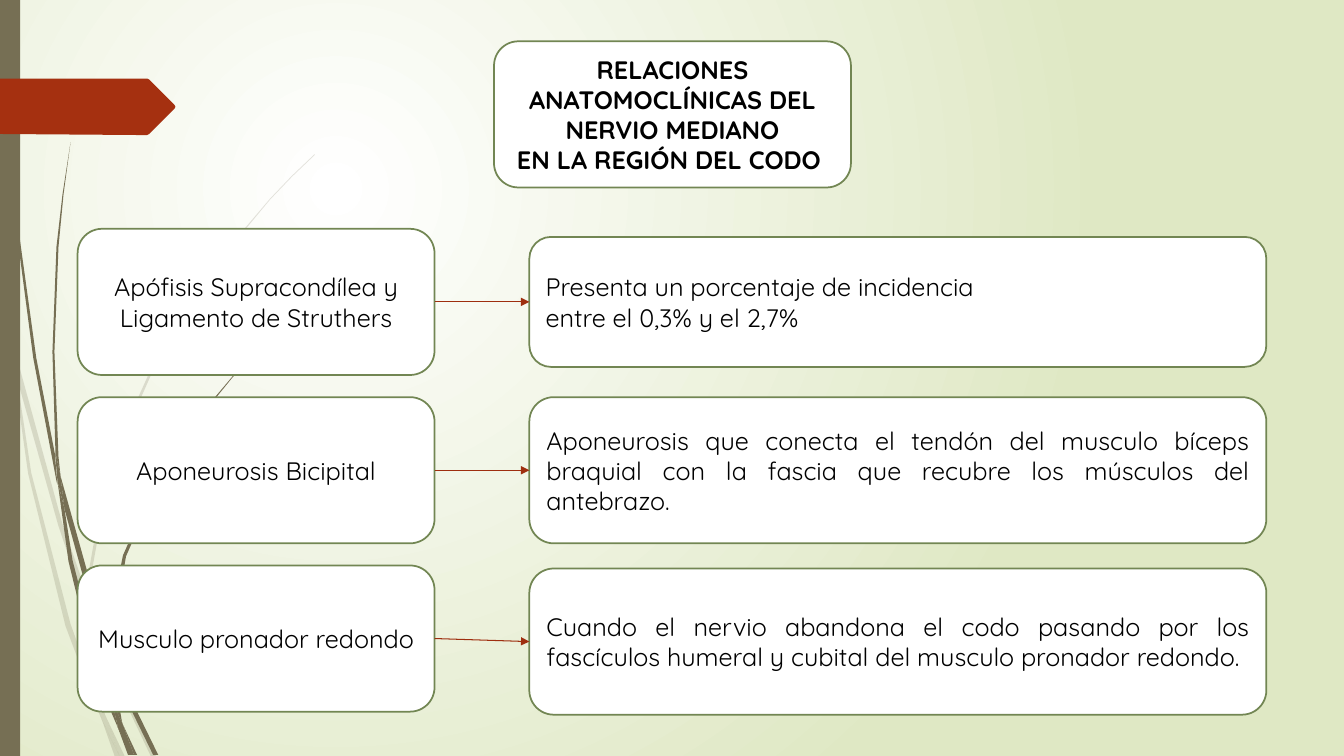
from lxml import etree
from pptx import Presentation
from pptx import util as u
from pptx.dml.color import RGBColor
from pptx.enum import shapes, text
from pptx.oxml.ns import qn

PX = 9144
OLIVE = RGBColor(0x76, 0x6F, 0x54)
RUST = RGBColor(0xA5, 0x30, 0x10)
ARROW = RGBColor(0x9E, 0x2E, 0x0F)
GREEN = RGBColor(0x72, 0x86, 0x53)
PALE_GREEN = RGBColor(0xDF, 0xE8, 0xC4)
WHITE = RGBColor(0xFF, 0xFF, 0xFF)
BLACK = RGBColor(0, 0, 0)
FONT = "Quicksand"

PALE_STEMS = [
    [(11, 350), (9, 322), (0, 282), (0, 299), (10, 344)],
    [(58, 522), (84, 599), (85, 586), (62, 520), (14, 345), (17, 376)],
    [(92, 607), (88, 596), (88, 610), (123, 694), (150, 751), (155, 751), (127, 692)],
    [(119, 751), (124, 751), (105, 711)],
    [(93, 683), (70, 619), (31, 469), (17, 376), (11, 350), (28, 470), (65, 621),
     (92, 693), (101, 714), (99, 707)],
    [(84, 599), (87, 646), (93, 683), (96, 692), (105, 711), (103, 706), (91, 646),
     (88, 610), (88, 608)],
    [(88, 584), (110, 462), (160, 349), (229, 245), (268, 198), (290, 175), (312, 154),
     (312, 153), (289, 175), (268, 197), (228, 244), (158, 348), (107, 461), (85, 584),
     (85, 586), (88, 596)],
    [(101, 714), (114, 751), (119, 751)],
    [(96, 692), (93, 683), (99, 707), (101, 714), (119, 751), (105, 711)],
]
DARK_STEMS = [
    [(7, 110), (17, 233), (33, 355), (56, 477), (57, 481), (55, 457), (55, 453),
     (36, 355), (19, 232), (8, 109), (5, 48), (4, 0), (3, 0), (4, 48)],
    [(88, 592), (106, 645), (106, 631), (93, 590), (60, 472), (64, 505)],
    [(113, 649), (110, 641), (111, 656), (132, 708), (152, 749), (157, 749), (136, 706)],
    [(110, 691), (98, 657), (72, 556), (64, 505), (57, 477), (68, 557), (93, 659),
     (111, 708), (117, 722), (116, 717)],
    [(60, 472), (58, 453), (54, 349), (58, 245), (63, 193), (70, 141), (62, 193),
     (56, 245), (52, 349), (55, 449)],
    [(133, 749), (136, 749), (122, 719)],
    [(57, 477), (64, 505), (60, 472), (55, 449), (55, 453)],
    [(111, 633), (125, 552), (158, 476), (205, 406), (231, 374), (245, 359), (261, 344),
     (260, 344), (245, 358), (231, 373), (204, 405), (156, 474), (122, 551), (106, 631),
     (110, 641)],
    [(117, 722), (127, 749), (131, 749)],
    [(106, 645), (110, 691), (116, 706), (122, 719), (121, 716), (111, 656), (109, 651)],
    [(116, 706), (110, 691), (116, 717), (117, 722), (130, 749), (133, 749), (122, 719)],
]
PENNANT = [(173, 30), (148, 55), (146, 56), (136, 56), (0, 55), (0, 0), (146, 0),
           (148, 1), (173, 26), (174, 28)]
TITLE = "RELACIONES ANATOMOCLÍNICAS DEL NERVIO MEDIANO\nEN LA REGIÓN DEL CODO "
ROWS = [
    ((77, 227, 354, 145), "Apófisis Supracondílea y Ligamento de Struthers",
     (525, 235, 731, 129),
     "Presenta un porcentaje de incidencia \nentre el 0,3% y el 2,7%"),
    ((77, 394, 354, 145), "Aponeurosis Bicipital",
     (525, 394, 731, 145),
     "Aponeurosis que conecta el tendón del musculo bíceps braquial con la fascia "
     "que recubre los músculos del antebrazo."),
    ((77, 561, 354, 145), "Musculo pronador redondo",
     (525, 564, 731, 145),
     "Cuando el nervio abandona el codo pasando por los fascículos humeral y cubital "
     "del musculo pronador redondo."),
]


def paint(shape, color):
    """Give a shape a plain fill with neither outline nor shadow."""
    shape.shadow.inherit = False
    shape.fill.solid()
    shape.fill.fore_color.rgb = color
    shape.line.fill.background()


def add_outline(slide, left, top, points, color):
    """Draw a closed outline whose points count from left and top."""
    builder = slide.shapes.build_freeform(*points[0], scale=PX)
    builder.add_line_segments(points[1:], close=True)
    outline = builder.convert_to_shape(left * PX, top * PX)
    paint(outline, color)
    return outline


def add_stems(slide, left, top, stems, opacity=100):
    """Draw a tuft of grass stems."""
    for points in stems:
        stem = add_outline(slide, left, top, points, OLIVE)
        if opacity < 100:
            tint = stem.fill._xPr.find(qn("a:solidFill"))[0]
            etree.SubElement(tint, qn("a:alpha"), val=str(opacity * 1000))


def add_backdrop(slide, left, top, height):
    """Draw the radial background, grass, side bar and pennant."""
    fill = slide.background.fill
    fill.gradient()
    for stop, color in zip(fill.gradient_stops, (WHITE, PALE_GREEN)):
        stop.color.rgb = color
    gradient = slide._element.find(".//" + qn("a:gradFill"))
    gradient.remove(gradient.find(qn("a:lin")))
    circle = etree.Element(qn("a:path"), path="circle")
    etree.SubElement(circle, qn("a:fillToRect"), l="50000", t="50000", r="100000", b="100000")
    gradient.find(qn("a:gsLst")).addnext(circle)

    add_stems(slide, left, top, PALE_STEMS, opacity=20)
    add_stems(slide, left, top, DARK_STEMS)
    bar = slide.shapes.add_shape(
        shapes.MSO_SHAPE.RECTANGLE, left * PX, top * PX, 20 * PX, height * PX)
    paint(bar, OLIVE)
    add_outline(slide, left, top + 78, PENNANT, RUST)


def add_card(slide, box, wording, align, bold=False):
    """Draw a rounded white card with its wording."""
    card = slide.shapes.add_shape(
        shapes.MSO_SHAPE.ROUNDED_RECTANGLE, *(length * PX for length in box))
    paint(card, WHITE)
    card.line.color.rgb = GREEN
    card.line.width = u.Pt(1.25)
    frame = card.text_frame
    frame.word_wrap = True
    frame.vertical_anchor = text.MSO_ANCHOR.MIDDLE
    frame.text = wording
    for paragraph in frame.paragraphs:
        paragraph.alignment = align
        paragraph.font.name = FONT
        paragraph.font.size = u.Pt(18)
        paragraph.font.bold = bold
        paragraph.font.color.rgb = BLACK
    return card


def add_row(slide, topic_box, topic, detail_box, detail):
    """Draw a topic card, its detail card and the arrow between them."""
    topic_card = add_card(slide, topic_box, topic, text.PP_ALIGN.CENTER)
    detail_card = add_card(slide, detail_box, detail, text.PP_ALIGN.JUSTIFY)
    arrow = slide.shapes.add_connector(shapes.MSO_CONNECTOR.STRAIGHT, 0, 0, 0, 0)
    arrow.begin_connect(topic_card, 3)
    arrow.end_connect(detail_card, 1)
    arrow.line.color.rgb = ARROW
    arrow.line.width = u.Pt(0.75)
    etree.SubElement(arrow.line._get_or_add_ln(), qn("a:tailEnd"), type="triangle")
    etree.SubElement(arrow._element.spPr, qn("a:effectLst"))


def main():
    """Build the slide and save it."""
    deck = Presentation()
    deck.slide_width, deck.slide_height = 1333 * PX, 750 * PX
    slide = deck.slides.add_slide(deck.slide_layouts[6])
    add_backdrop(slide, 0, 0, 750)
    add_card(slide, (490, 41, 354, 145), TITLE, text.PP_ALIGN.CENTER, bold=True)
    for row in ROWS:
        add_row(slide, *row)
    deck.save("out.pptx")


if __name__ == "__main__":
    main()
